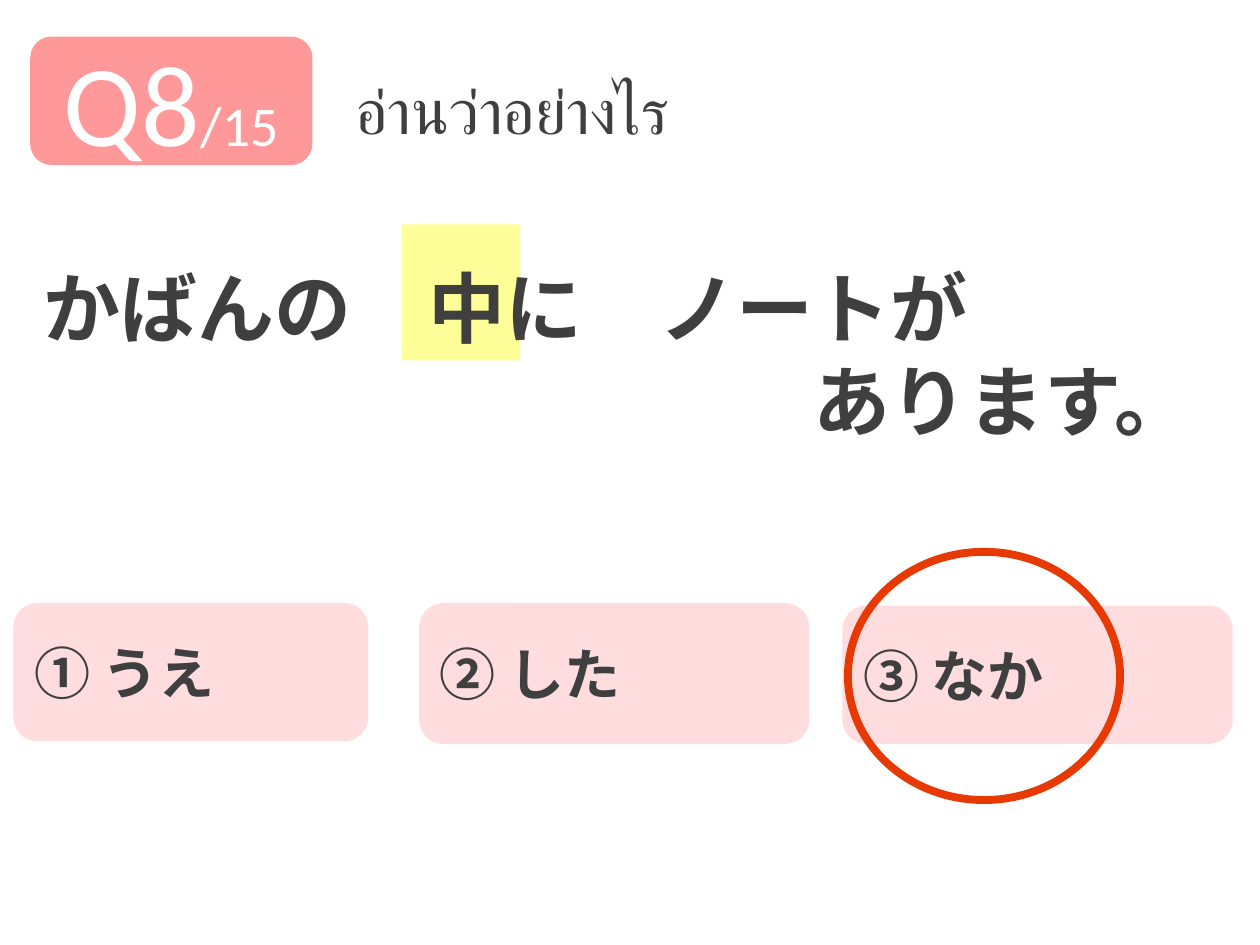
from dataclasses import dataclass
from pptx import Presentation
from pptx.dml.color import RGBColor
from pptx.enum.shapes import MSO_SHAPE
from pptx.enum.text import MSO_ANCHOR, PP_ALIGN
from pptx.util import Inches, Pt


@dataclass(frozen=True)
class Theme:
    highlight: str = "FFFF99"
    badge: str = "FF9999"
    answer: str = "FFDDDE"
    ring: str = "E73903"
    ink: str = "3F3F3F"
    white: str = "FFFFFF"
    badge_font: str = "Calibri"
    body_font: str = "Roboto"
    number_size: int = 66
    total_size: int = 32
    prompt_size: int = 36
    sentence_size: int = 44
    answer_size: int = 32


class QuizSlide:
    def __init__(self, prs, theme):
        self.theme = theme
        self.s = prs.slides.add_slide(prs.slide_layouts[6])

    def shape(self, kind, box, fill=None, line=None, width=2):
        sp = self.s.shapes.add_shape(kind, *map(Inches, box))
        sp.shadow.inherit = False
        if fill:
            sp.fill.solid()
            sp.fill.fore_color.rgb = RGBColor.from_string(fill)
        else:
            sp.fill.background()
        if line:
            sp.line.color.rgb = RGBColor.from_string(line)
            sp.line.width = Pt(width)
        else:
            sp.line.fill.background()
        sp.text_frame.vertical_anchor = MSO_ANCHOR.MIDDLE
        return sp

    def run(self, p, text, size, color=None, font=None, bold=False):
        r = p.add_run()
        r.text = text
        r.font.size = Pt(size)
        r.font.name = font or self.theme.body_font
        r.font.bold = bold
        r.font.color.rgb = RGBColor.from_string(color or self.theme.ink)

    def badge(self, box, number, total):
        t = self.theme
        p = self.shape(MSO_SHAPE.ROUNDED_RECTANGLE, box, t.badge).text_frame.paragraphs[0]
        p.alignment = PP_ALIGN.CENTER
        self.run(p, number, t.number_size, t.white, t.badge_font)
        self.run(p, total, t.total_size, t.white, t.badge_font)

    def answer(self, box, text):
        t = self.theme
        sp = self.shape(MSO_SHAPE.ROUNDED_RECTANGLE, box, t.answer, t.answer)
        p = sp.text_frame.paragraphs[0]
        p.alignment = PP_ALIGN.LEFT
        self.run(p, text, t.answer_size, bold=True)

    def text(self, box, lines, size, bold=False):
        """Each line is a pair: text and left indent in inches."""
        tf = self.s.shapes.add_textbox(*map(Inches, box)).text_frame
        tf.word_wrap = True
        for i, (line, indent) in enumerate(lines):
            p = tf.add_paragraph() if i else tf.paragraphs[0]
            if indent:
                p._p.get_or_add_pPr().set("marL", str(Inches(indent)))
            self.run(p, line, size, bold=bold)


def main():
    prs = Presentation()
    prs.slide_width, prs.slide_height = Inches(10), Inches(7.5)
    theme = Theme()
    quiz = QuizSlide(prs, theme)

    # Highlight behind the word being asked about
    quiz.shape(MSO_SHAPE.RECTANGLE, (3.19, 1.78, 0.94, 1.08), theme.highlight)

    # Question number
    quiz.badge((0.24, 0.29, 2.24, 1.02), "Q8", "/15")

    # Answer choices
    for box, text in (
        ((0.12, 4.8, 2.79, 1.07), "① うえ"),
        ((3.34, 4.8, 3.07, 1.09), "② した"),
        ((6.7, 4.82, 3.07, 1.07), "③ なか"),
    ):
        quiz.answer(box, text)

    # Sentence, its second line indented by ten full-width characters
    indent = 10 * theme.sentence_size / 72
    quiz.text((0.25, 2.02, 9.47, 1.58),
              [("かばんの　中に　ノートが", 0), ("あります。", indent)],
              theme.sentence_size, bold=True)

    # Prompt
    quiz.text((2.72, 0.52, 6.85, 0.71), [("อ่านว่าอย่างไร", 0)], theme.prompt_size)

    # Ring around the correct answer
    quiz.shape(MSO_SHAPE.OVAL, (6.73, 4.38, 2.16, 1.97), line=theme.ring, width=4.5)

    prs.save("out.pptx")


if __name__ == "__main__":
    main()
